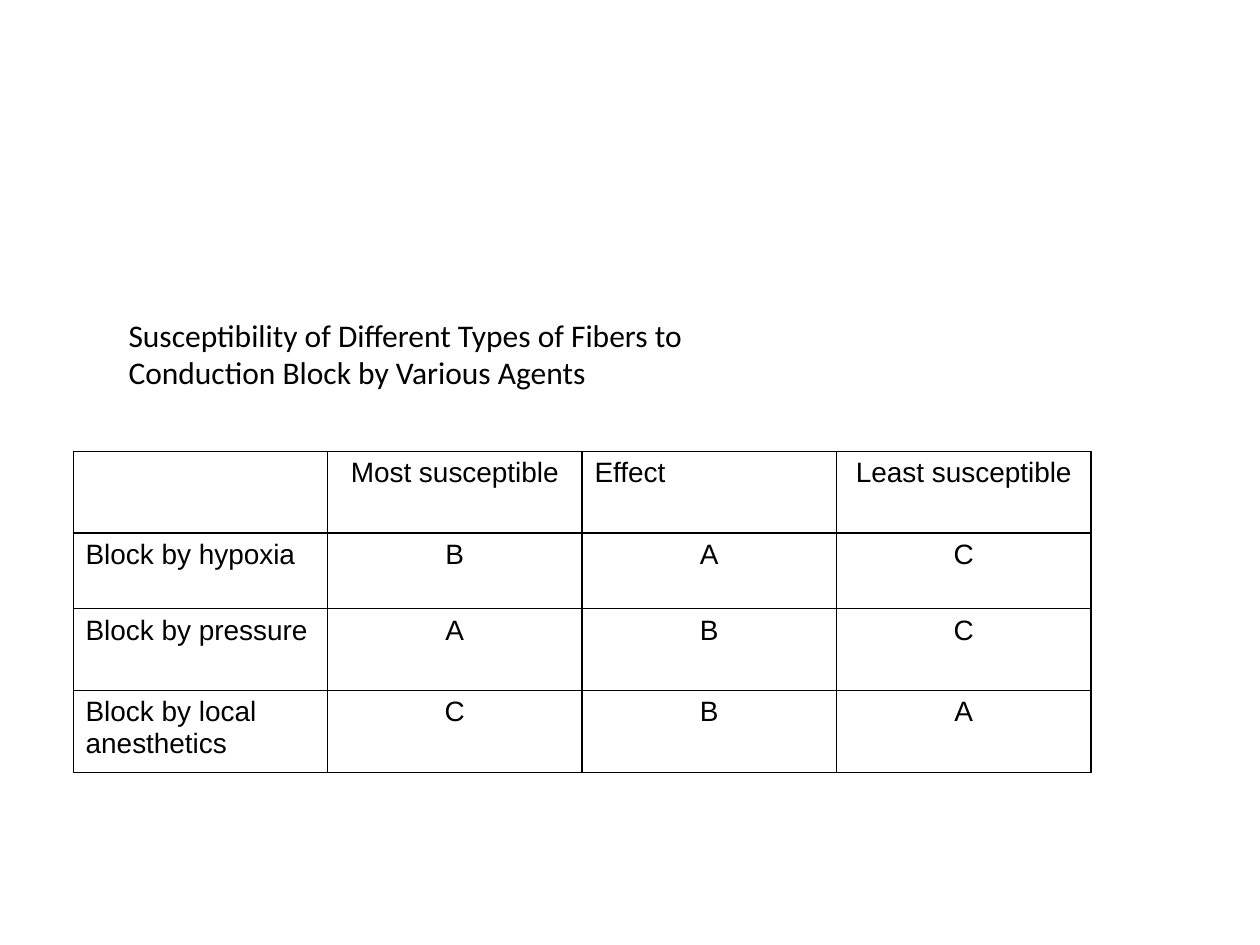
import pptx
import pptx.dml.color
import pptx.enum.text
import pptx.oxml
import pptx.oxml.ns
import pptx.util
from dataclasses import dataclass

Inches = pptx.util.Inches
Align = pptx.enum.text.PP_ALIGN
Anchor = pptx.enum.text.MSO_ANCHOR


@dataclass(frozen=True)
class Theme:
    ink: str = "000000"
    paper: str = "FFFFFF"
    title_font: str = "Calibri"
    table_font: str = "Arial"
    title_size: int = 18
    table_size: int = 16
    rule_width: float = 0.75


theme = Theme()


def write(frame, text, *, font, size, align=Align.LEFT, anchor=Anchor.TOP):
    frame.word_wrap = True
    frame.vertical_anchor = anchor
    paragraph = frame.paragraphs[0]
    paragraph.text = text
    paragraph.alignment = align
    for run in paragraph.runs:
        run.font.name = font
        run.font.size = pptx.util.Pt(size)
        run.font.color.rgb = pptx.dml.color.RGBColor.from_string(theme.ink)


def rule_cell(cell):
    """Draw a thin line on all four sides of the cell."""
    properties = cell._tc.get_or_add_tcPr()
    width = pptx.util.Pt(theme.rule_width)
    for position, side in enumerate(("lnL", "lnR", "lnT", "lnB")):
        properties.insert(position, pptx.oxml.parse_xml(
            f'<a:{side} {pptx.oxml.ns.nsdecls("a")} w="{width}"><a:solidFill>'
            f'<a:srgbClr val="{theme.ink}"/></a:solidFill></a:{side}>'))


deck = pptx.Presentation()
deck.slide_width, deck.slide_height = Inches(10), Inches(7.5)
slide = deck.slides.add_slide(deck.slide_layouts[5])

title = slide.shapes.title
title.left, title.top = Inches(0.92), Inches(2.45)
title.width, title.height = Inches(8.25), Inches(0.71)
write(title.text_frame,
      "Susceptibility of Different Types of Fibers to\n"
      "Conduction Block by Various Agents",
      font=theme.title_font, size=theme.title_size, anchor=Anchor.MIDDLE)
title.text_frame.auto_size = pptx.enum.text.MSO_AUTO_SIZE.SHAPE_TO_FIT_TEXT

susceptibility = [
    ["", "Most susceptible", "Effect", "Least susceptible"],
    ["Block by hypoxia", "B", "A", "C"],
    ["Block by pressure", "A", "B", "C"],
    ["Block by local anesthetics", "C", "B", "A"],
]
row_heights = [0.65, 0.6, 0.65, 0.65]

table = slide.shapes.add_table(
    len(susceptibility), len(susceptibility[0]),
    Inches(0.58), Inches(3.58), Inches(8.08), Inches(sum(row_heights))).table
table.first_row = table.horz_banding = False
for column in table.columns:
    column.width = Inches(2.02)

for r, (labels, height) in enumerate(zip(susceptibility, row_heights)):
    table.rows[r].height = Inches(height)
    for c, label in enumerate(labels):
        cell = table.cell(r, c)
        cell.fill.solid()
        cell.fill.fore_color.rgb = pptx.dml.color.RGBColor.from_string(theme.paper)
        left_aligned = c == 0 or label == "Effect"
        write(cell.text_frame, label, font=theme.table_font, size=theme.table_size,
              align=Align.LEFT if left_aligned else Align.CENTER)
        rule_cell(cell)

deck.save("out.pptx")
